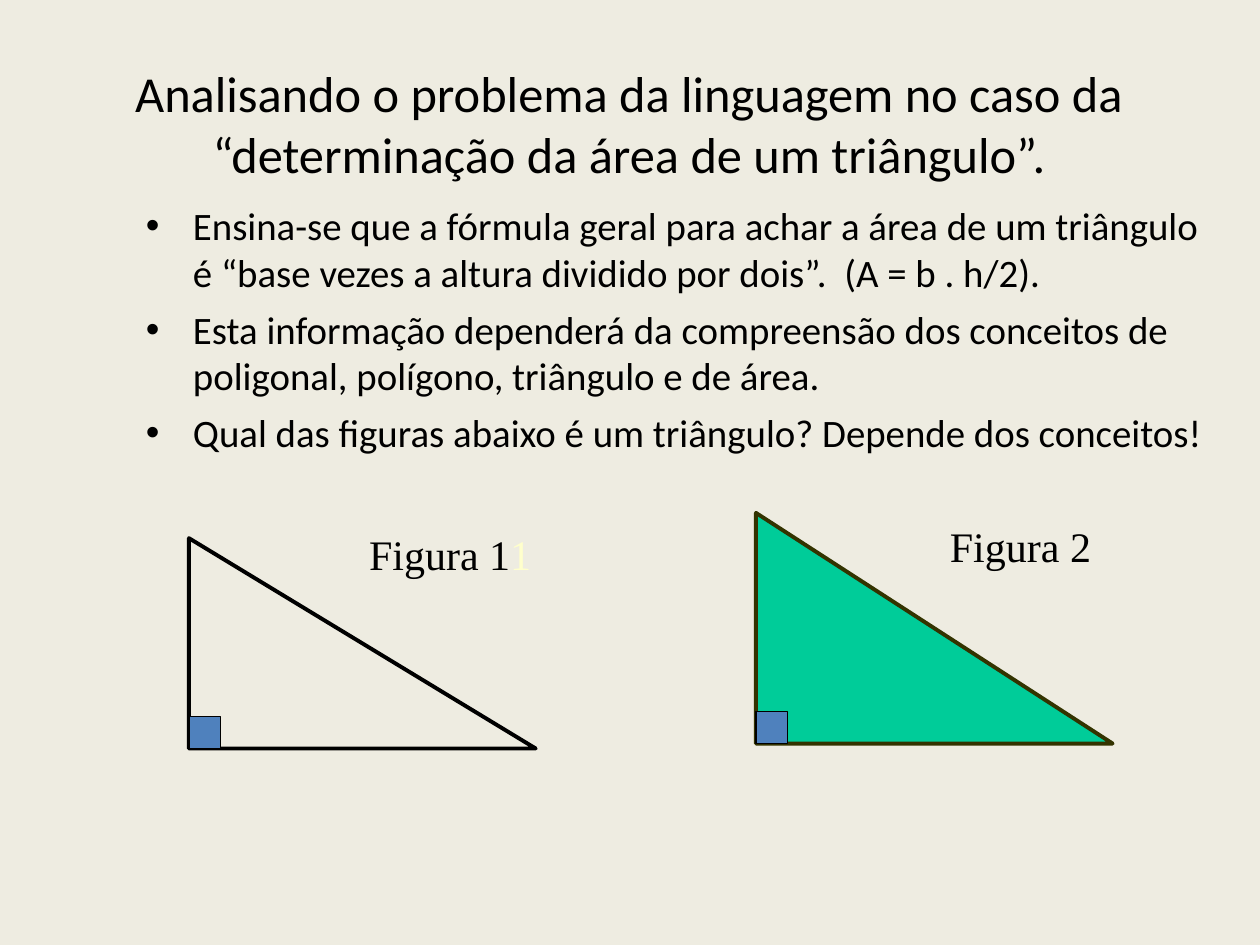
from lxml.etree import SubElement
from pptx import Presentation
from pptx.dml.color import RGBColor
from pptx.enum.shapes import MSO_SHAPE
from pptx.enum.text import MSO_ANCHOR, MSO_AUTO_SIZE, PP_ALIGN
from pptx.oxml.ns import qn
from pptx.util import Cm, Pt

TITLE = "Analisando o problema da linguagem no caso da “determinação da área de um triângulo”."
POINTS = [
    "Ensina-se que a fórmula geral para achar a área de um triângulo é “base vezes a altura dividido por dois”.  (A = b . h/2).",
    "Esta informação dependerá da compreensão dos conceitos de poligonal, polígono, triângulo e de área.",
    "Qual das figuras abaixo é um triângulo? Depende dos conceitos!",
]
TRIANGLES = [
    ((3.81, 10.85, 6.99, 4.24), None, "000000"),
    ((15.24, 10.34, 7.19, 4.65), "00CC99", "333300"),
]
LABELS = [
    ((7.19, 10.52, 4.7, 1.3), [("Figura 1", "000000"), ("1", "FFFFCC")]),
    ((18.9, 10.36, 3.81, 1.27), [("Figura 2", "000000")]),
]
SIDE = 0.64


def color(code):
    return RGBColor.from_string(code)


def add_box(slide, area):
    frame = slide.shapes.add_textbox(*map(Cm, area)).text_frame
    frame.word_wrap = True
    return frame


def add_run(para, text, size, font="Calibri", tint="000000"):
    run = para.add_run()
    run.text = text
    run.font.size = Pt(size)
    run.font.name = font
    run.font.color.rgb = color(tint)


def add_title(slide, area, text):
    frame = add_box(slide, area)
    frame.vertical_anchor = MSO_ANCHOR.MIDDLE
    para = frame.paragraphs[0]
    para.alignment = PP_ALIGN.CENTER
    add_run(para, text, 28.8)


def add_list(slide, area, points):
    frame = add_box(slide, area)
    for i, text in enumerate(points):
        para = frame.add_paragraph() if i else frame.paragraphs[0]
        para.space_before = Pt(6)
        props = para._p.get_or_add_pPr()
        props.set("marL", str(Cm(0.95)))
        props.set("indent", str(-Cm(0.95)))
        SubElement(props, qn("a:buFont"), typeface="Arial")
        SubElement(props, qn("a:buChar"), char="•")
        add_run(para, text, 22.2)


def add_label(slide, area, parts):
    frame = add_box(slide, area)
    frame.auto_size = MSO_AUTO_SIZE.SHAPE_TO_FIT_TEXT
    para = frame.paragraphs[0]
    para.space_before = Pt(15)
    for text, tint in parts:
        add_run(para, text, 24, "Times New Roman", tint)


def add_form(slide, kind, area, fill, line, width):
    form = slide.shapes.add_shape(kind, *map(Cm, area))
    form.shadow.inherit = False
    if fill:
        form.fill.solid()
        form.fill.fore_color.rgb = color(fill)
    else:
        form.fill.background()
    form.line.color.rgb = color(line)
    form.line.width = Pt(width)


def main():
    deck = Presentation()
    deck.slide_width, deck.slide_height = Cm(25.4), Cm(19.05)
    slide = deck.slides.add_slide(deck.slide_layouts[6])
    slide.background.fill.solid()
    slide.background.fill.fore_color.rgb = color("EEECE1")

    add_title(slide, (1.09, 1.02, 23.19, 2.92), TITLE)
    add_list(slide, (2.69, 3.94, 22.2, 6.81), POINTS)
    for area, fill, line in TRIANGLES:
        add_form(slide, MSO_SHAPE.RIGHT_TRIANGLE, area, fill, line, 2.25)
    for area, parts in LABELS:
        add_label(slide, area, parts)
    for (left, top, width, height), fill, line in TRIANGLES:
        corner = (left, top + height - SIDE, SIDE, SIDE)
        add_form(slide, MSO_SHAPE.RECTANGLE, corner, "4F81BD", "000000", 0.75)
    deck.save("out.pptx")


if __name__ == "__main__":
    main()
